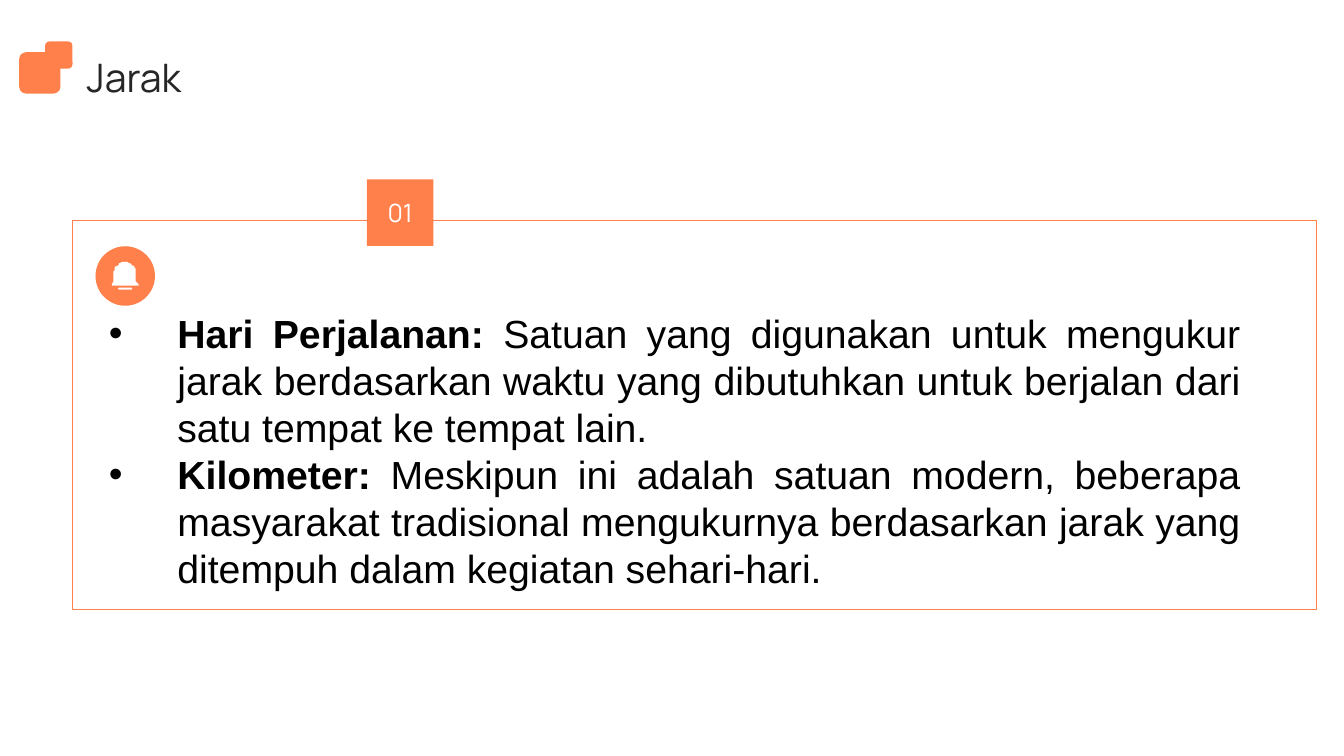
import math
from pptx import Presentation
from pptx import util as u
from pptx.dml import color
from pptx.enum import shapes, text
from pptx.oxml import ns
from lxml import etree

Kind = shapes.MSO_SHAPE
Mid = text.MSO_ANCHOR.MIDDLE
Al = text.PP_ALIGN


def tint(code):
    return color.RGBColor.from_string(code)


def apply(item, **vals):
    for key, val in vals.items():
        setattr(item, key, val)


class Deck:
    main, white, dark, black = "FF804B", "FFFFFF", "262626", "000000"
    head, body = "Manrope", "Arial"

    def __init__(self):
        self.file = Presentation()
        apply(self.file, slide_width=u.Pt(960), slide_height=u.Pt(540))
        self.slide = self.file.slides.add_slide(self.file.slide_layouts[5])

    def paint(self, item, fill, line=None):
        item.shadow.inherit = False
        item.fill.solid()
        item.fill.fore_color.rgb = tint(fill)
        if line:
            item.line.color.rgb = tint(line)
            item.line.width = u.Pt(1)
        else:
            item.line.fill.background()
        return item

    def shape(self, kind, box, fill, line=None):
        item = self.slide.shapes.add_shape(kind, *map(u.Pt, box))
        return self.paint(item, fill, line)

    def poly(self, dots, fill):
        pen = self.slide.shapes.build_freeform(*dots[0], scale=u.Pt(1))
        pen.add_line_segments(dots[1:], close=True)
        return self.paint(pen.convert_to_shape(), fill)

    def label(self, para, words, size, face, ink, bold=False):
        run = para.add_run()
        run.text = words
        apply(run.font, size=u.Pt(size), name=face, bold=bold)
        run.font.color.rgb = tint(ink)

    def title(self, words, box):
        item = self.slide.shapes.title
        apply(item, **dict(zip(("left", "top", "width", "height"), map(u.Pt, box))))
        frame = item.text_frame
        apply(frame, vertical_anchor=Mid, auto_size=text.MSO_AUTO_SIZE.NONE,
              margin_left=0, margin_top=0, margin_right=0, margin_bottom=0)
        para = frame.paragraphs[0]
        para.alignment = Al.LEFT
        self.label(para, words, 28, self.head, self.dark)

    def badge(self, words, box):
        frame = self.shape(Kind.RECTANGLE, box, self.main).text_frame
        frame.vertical_anchor = Mid
        para = frame.paragraphs[0]
        para.alignment = Al.CENTER
        self.label(para, words, 18, self.head, self.white)

    def points(self, rows, box):
        frame = self.slide.shapes.add_textbox(*map(u.Pt, box)).text_frame
        apply(frame, word_wrap=True, vertical_anchor=Mid)
        for num, (term, words) in enumerate(rows):
            para = frame.add_paragraph() if num else frame.paragraphs[0]
            apply(para, alignment=Al.JUSTIFY, line_spacing=u.Pt(33.6))
            self.bullet(para, 49)
            self.label(para, term, 28, self.body, self.black, True)
            self.label(para, words, 28, self.body, self.black)

    def bullet(self, para, gap):
        props = para._p.get_or_add_pPr()
        props.set("marL", str(u.Pt(gap)))
        props.set("indent", str(-u.Pt(gap)))
        etree.SubElement(props, ns.qn("a:buFont")).set("typeface", self.body)
        etree.SubElement(props, ns.qn("a:buChar")).set("char", "•")

    def bell(self, mid, top):
        rad = 8
        turns = [math.pi * (1 + step / 24) for step in range(25)]
        dome = [(mid + rad * math.cos(t), top + rad + rad * math.sin(t)) for t in turns]
        rim = [(8, 13.7), (9.5, 16), (9.2, 17.3), (-9.2, 17.3), (-9.5, 16), (-8, 13.7)]
        self.poly(dome + [(mid + x, top + y) for x, y in rim], self.white)
        bar = self.shape(Kind.ROUNDED_RECTANGLE, (mid - 5, top + 18.2, 10, 1.4), self.white)
        bar.adjustments[0] = 0.5


def main():
    deck = Deck()
    deck.shape(Kind.RECTANGLE, (51.8, 157.7, 888.5, 277.9), deck.white, deck.main)
    deck.badge("01", (262.1, 128.2, 47.5, 47.5))
    deck.shape(Kind.OVAL, (68.2, 175.9, 42.5, 42.5), deck.main)
    deck.bell(89.4, 187.2)
    deck.title("Jarak", (61.9, 36.7, 840.2, 36.7))
    for left, top, side in ((13.7, 37.3, 29.5), (32.2, 29.5, 19.6)):
        deck.shape(Kind.ROUNDED_RECTANGLE, (left, top, side, side), deck.main)
    deck.points([
        ("Hari Perjalanan: ", "Satuan yang digunakan untuk mengukur jarak berdasarkan "
         "waktu yang dibutuhkan untuk berjalan dari satu tempat ke tempat lain."),
        ("Kilometer: ", "Meskipun ini adalah satuan modern, beberapa masyarakat tradisional "
         "mengukurnya berdasarkan jarak yang ditempuh dalam kegiatan sehari-hari."),
    ], (70.6, 216, 822.2, 211))
    deck.file.save("out.pptx")


if __name__ == "__main__":
    main()
